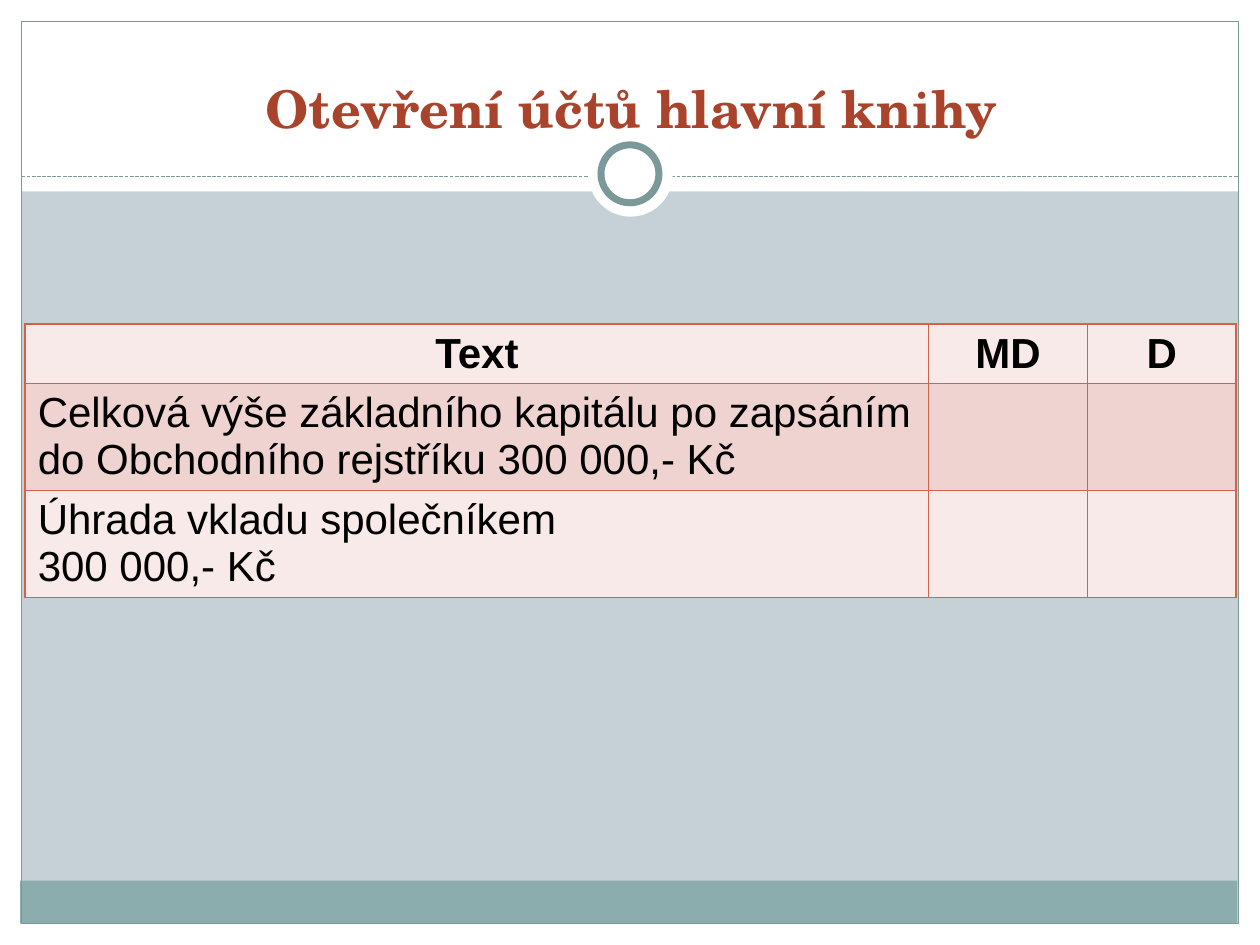
from lxml.etree import SubElement
from pptx import Presentation
from pptx.dml.color import RGBColor
from pptx.enum.dml import MSO_LINE
from pptx.enum.shapes import MSO_CONNECTOR, MSO_SHAPE
from pptx.enum.text import MSO_ANCHOR, PP_ALIGN
from pptx.oxml.ns import qn
from pptx.util import Pt

PX = 9144
WHITE, TEAL, RED = "FFFFFF", "7C999A", "D16349"


def tint(code):
    return RGBColor.from_string(code)


def style(font, code, form):
    font.color.rgb = tint(code)
    for name, value in form.items():
        setattr(font, name, value)


deck = Presentation()
deck.slide_width, deck.slide_height = 1000 * PX, 750 * PX
slide = deck.slides.add_slide(deck.slide_layouts[5])
slide.background.fill.solid()
slide.background.fill.fore_color.rgb = tint("C5D1D7")
shapes = slide.shapes

rect, oval = MSO_SHAPE.RECTANGLE, MSO_SHAPE.OVAL
parts = [
    (rect, (0, 733, 1000, 17), WHITE, 0),
    (rect, (0, 0, 1000, 152), WHITE, 0),
    (rect, (0, 0, 17, 750), WHITE, 0),
    (rect, (983, 0, 17, 750), WHITE, 0),
    (rect, (16, 699, 966, 34), "8CADAE", 0),
    (rect, (17, 17, 966, 716), None, 0.75),
    (None, (17, 140, 983, 140), None, 0.75),
    (oval, (467, 105, 67, 67), WHITE, 0),
    (oval, (477, 115, 46, 46), WHITE, 4),
]
for kind, box, fill, width in parts:
    spots = [n * PX for n in box]
    if kind is None:
        item = shapes.add_connector(MSO_CONNECTOR.STRAIGHT, *spots)
        item.line.dash_style = MSO_LINE.SQUARE_DOT
        SubElement(item._element.spPr, qn("a:effectLst"))
    else:
        item = shapes.add_shape(kind, *spots)
        item.shadow.inherit = False
        if fill:
            item.fill.solid()
            item.fill.fore_color.rgb = tint(fill)
        else:
            item.fill.background()
    if width:
        item.line.color.rgb = tint(TEAL)
        item.line.width = Pt(width)
    else:
        item.line.fill.background()

title = shapes.title
shapes._spTree.append(title._element)
place = {"left": 35, "top": 52, "width": 933, "height": 110}
for name, value in place.items():
    setattr(title, name, value * PX)
frame = title.text_frame
frame.text = "Otevření účtů hlavní knihy"
frame.word_wrap = True
frame.vertical_anchor = MSO_ANCHOR.BOTTOM
frame.margin_bottom = 52 * PX
head = frame.paragraphs[0]
head.alignment = PP_ALIGN.CENTER
style(head.runs[0].font, "A9432B",
      {"name": "TeX Gyre Schola", "size": Pt(29.7), "bold": True})

rows = [
    ["Text", "MD", "D"],
    ["Celková výše základního kapitálu po zapsáním do Obchodního rejstříku 300 000,- Kč", "", ""],
    ["Úhrada vkladu společníkem\n300 000,- Kč", "", ""],
]
wide, high = [717, 126, 118], [47, 85, 85]
fills = ["F7EAE9", "EED3D0"]
grid = shapes.add_table(3, 3, 20 * PX, 257 * PX, sum(wide) * PX, sum(high) * PX).table
grid.first_row = grid.horz_banding = False
for col, size in zip(grid.columns, wide):
    col.width = size * PX
for r, row in enumerate(rows):
    grid.rows[r].height = high[r] * PX
    for c, text in enumerate(row):
        cell = grid.cell(r, c)
        cell.text = text
        props = cell._tc.get_or_add_tcPr()
        for side in "LRTB":
            edge = SubElement(props, qn("a:ln" + side), w=str(Pt(1)))
            solid = SubElement(edge, qn("a:solidFill"))
            SubElement(solid, qn("a:srgbClr"), val=RED)
        cell.fill.solid()
        cell.fill.fore_color.rgb = tint(fills[r % 2])
        for para in cell.text_frame.paragraphs:
            para.alignment = PP_ALIGN.LEFT if r else PP_ALIGN.CENTER
            for run in para.runs:
                style(run.font, "000000",
                      {"name": "Arial", "size": Pt(24), "bold": r == 0})

deck.save("out.pptx")
